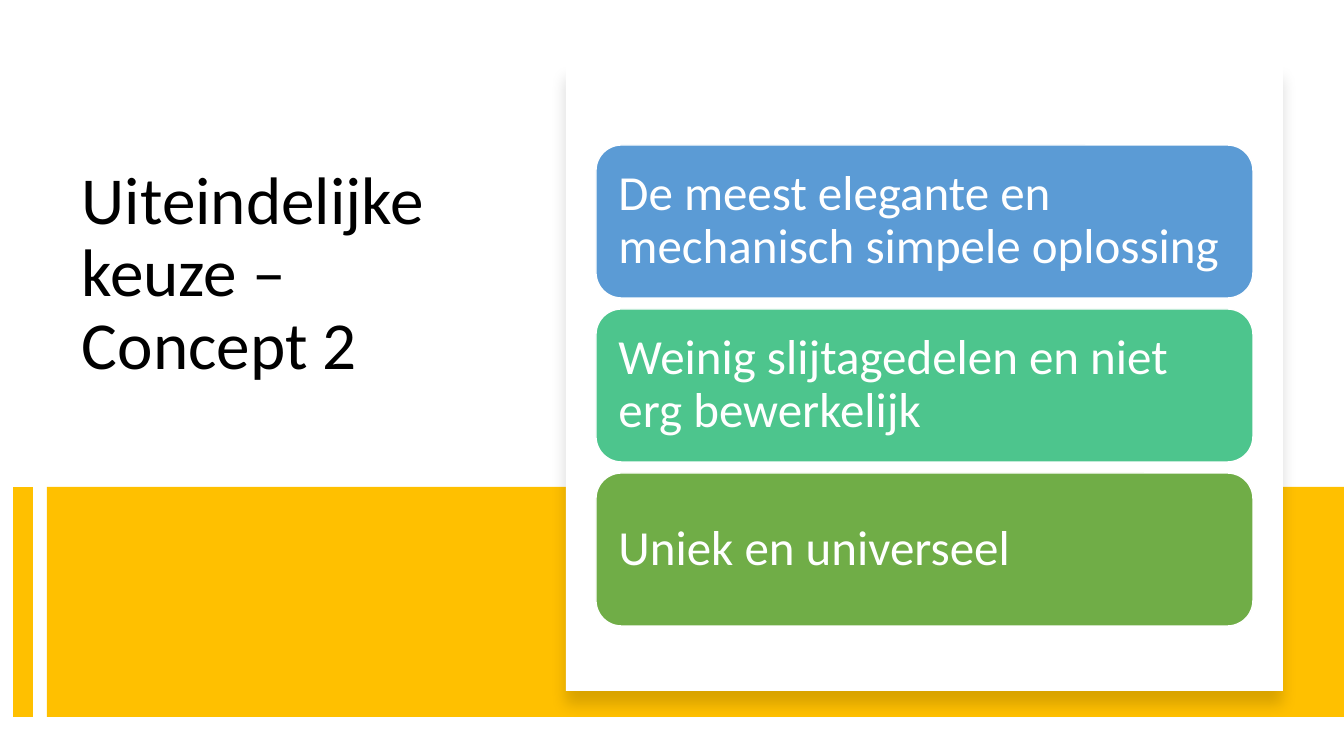
from lxml.etree import SubElement
from pptx import Presentation
from pptx.dml.color import RGBColor
from pptx.enum.shapes import MSO_CONNECTOR, MSO_SHAPE
from pptx.enum.text import MSO_ANCHOR, PP_ALIGN
from pptx.oxml.ns import qn
from pptx.util import Emu, Pt

WHITE = RGBColor(0xFF, 0xFF, 0xFF)
BLACK = RGBColor(0x00, 0x00, 0x00)
AMBER = RGBColor(0xFF, 0xC0, 0x00)
BLUE = RGBColor(0x5B, 0x9B, 0xD5)
MINT = RGBColor(0x4D, 0xC5, 0x8D)
GREEN = RGBColor(0x70, 0xAD, 0x47)

REASONS = [
    ("De meest elegante en mechanisch simpele oplossing", BLUE),
    ("Weinig slijtagedelen en niet erg bewerkelijk", MINT),
    ("Uniek en universeel", GREEN),
]
CARD_TOP, CARD_HEIGHT, CARD_GAP = 145, 153, 11


def px(*lengths):
    return [Emu(round(length * 914400 / 100.8)) for length in lengths]


class Painter:
    font_name = "Calibri"
    line_spacing = 0.9

    def __init__(self, page):
        self.page = page

    def set_text(self, frame, text, size, color):
        frame.word_wrap = True
        paragraph = frame.paragraphs[0]
        paragraph.text = text
        paragraph.alignment = PP_ALIGN.LEFT
        paragraph.line_spacing = self.line_spacing
        paragraph.font.name = self.font_name
        paragraph.font.size = Pt(size)
        paragraph.font.color.rgb = color

    def title(self, text, left, top, width, height):
        box = self.page.shapes.add_textbox(*px(left, top, width, height))
        self.set_text(box.text_frame, text, 48, BLACK)

    def block(self, color, left, top, width, height, kind=MSO_SHAPE.RECTANGLE):
        shape = self.page.shapes.add_shape(kind, *px(left, top, width, height))
        shape.shadow.inherit = False
        shape.fill.solid()
        shape.fill.fore_color.rgb = color
        shape.line.fill.background()
        return shape

    def panel(self, left, top, width, height):
        """Draw a white block with a soft shadow below it."""
        panel = self.block(WHITE, left, top, width, height)
        effects = panel._element.spPr.find(qn("a:effectLst"))
        shadow = SubElement(effects, qn("a:outerShdw"), blurRad=str(Pt(11)),
                            dist=str(Pt(10)), dir="5400000", rotWithShape="0")
        tint = SubElement(shadow, qn("a:srgbClr"), val=str(BLACK))
        SubElement(tint, qn("a:alpha"), val="15000")

    def card(self, text, color, left, top, width, height):
        card = self.block(color, left, top, width, height, MSO_SHAPE.ROUNDED_RECTANGLE)
        card.line.color.rgb = WHITE
        card.line.width = Pt(1)
        frame = card.text_frame
        frame.vertical_anchor = MSO_ANCHOR.MIDDLE
        (inset,) = px(15)
        frame.margin_left = frame.margin_right = inset
        frame.margin_top = frame.margin_bottom = inset
        self.set_text(frame, text, 35, WHITE)

    def vertical_line(self, color, x, top, bottom, weight):
        line = self.page.shapes.add_connector(
            MSO_CONNECTOR.STRAIGHT, *px(x, top, x, bottom))
        line.line.color.rgb = color
        line.line.width = Pt(weight)
        SubElement(line._element.spPr, qn("a:effectLst"))


def main():
    deck = Presentation()
    deck.slide_width, deck.slide_height = px(1344, 756)
    painter = Painter(deck.slides.add_slide(deck.slide_layouts[6]))

    painter.title("Uiteindelijke keuze – Concept 2", 72, 161, 418, 296)
    painter.block(AMBER, 47, 487, 1297, 230)
    painter.vertical_line(AMBER, 23, 487, 717, 14)
    painter.panel(566, 65, 717, 626)
    for index, (text, color) in enumerate(REASONS):
        top = CARD_TOP + index * (CARD_HEIGHT + CARD_GAP)
        painter.card(text, color, 596, top, 657, CARD_HEIGHT)

    deck.save("out.pptx")


if __name__ == "__main__":
    main()
